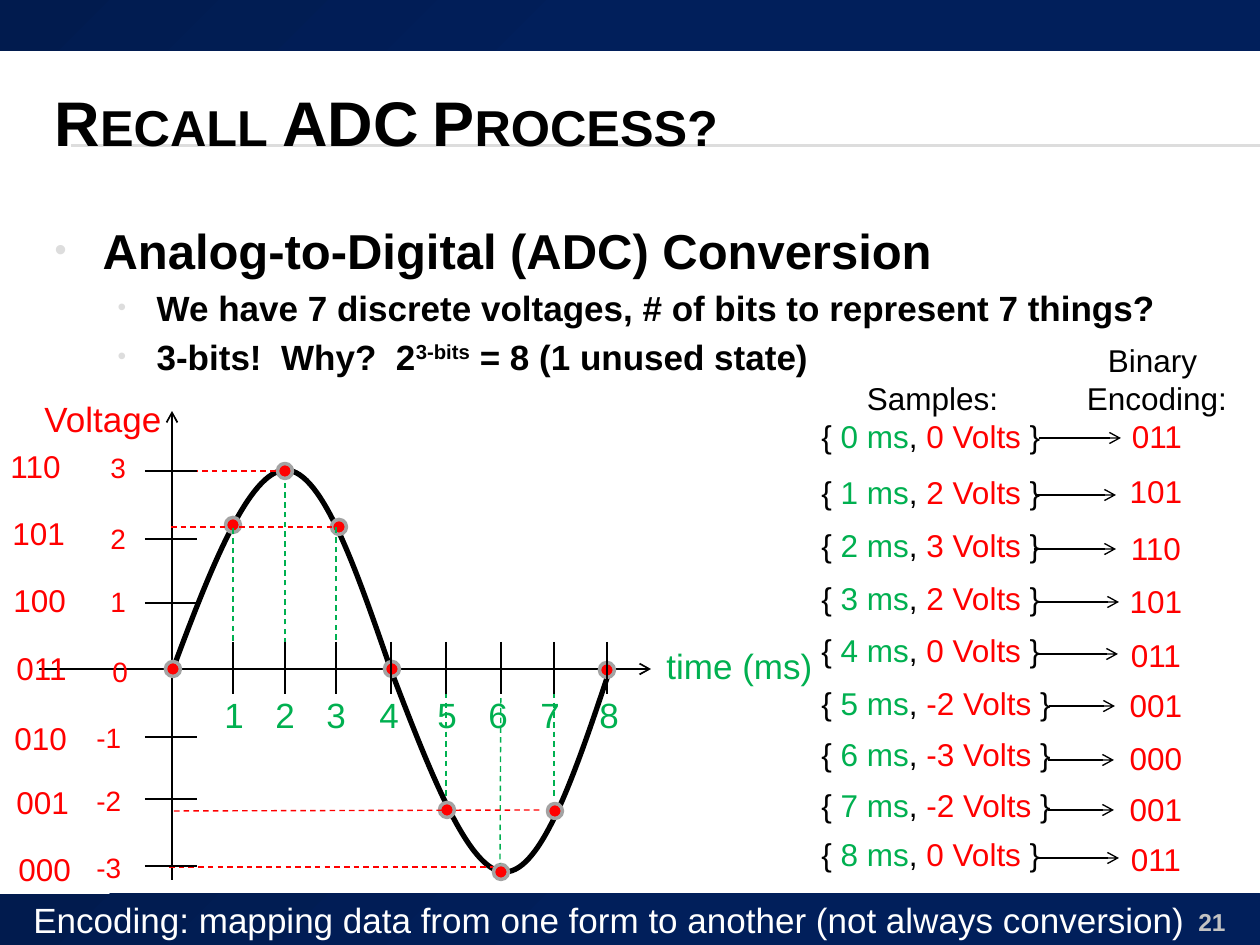
from lxml.etree import SubElement
from pptx import Presentation
from pptx.dml.color import RGBColor
from pptx.enum.dml import MSO_LINE
from pptx.enum.shapes import MSO_CONNECTOR, MSO_SHAPE
from pptx.enum.text import MSO_ANCHOR, MSO_AUTO_SIZE, PP_ALIGN
from pptx.oxml.ns import qn
from pptx.util import Pt

PX = 914400 / 126
FONT = "Arial"
BLACK, RED, GREEN, WHITE = "000000", "FF0000", "00B050", "FFFFFF"
PALE, RING, NAVY = "DDDDDD", "A3A3A3", ("011B4E", "011F5B")
VOLTAGES = [0, 2, 3, 2, 0, -2, -3, -2, 0]
DOTS = [(173, 669), (233, 525), (285, 471), (339, 527), (392, 669),
        (447, 810), (501, 872), (555, 811), (607, 670)]
TIME_TICKS = [(233, 212), (285, 263), (336, 314), (391, 367),
              (446, 425), (501, 476), (554, 528), (607, 587)]
LEVELS = [(3, 471, 444, 98, 441, -2), (2, 539, 515, 98, 508, 0),
          (1, 603, 578, 98, 575, 1), (0, None, 648, 100, 643, 4),
          (-1, 737, 714, 84, 713, 2), (-2, 799, 777, 84, 777, 4),
          (-3, 866, 844, 84, 844, 6)]
GUIDES = [(233, 670, 233, 525, GREEN), (171, 527, 336, 527, RED),
          (285, 673, 285, 479, GREEN), (173, 471, 284, 471, RED),
          (336, 669, 336, 525, GREEN), (446, 654, 446, 799, GREEN),
          (501, 669, 500, 864, GREEN), (554, 654, 554, 799, GREEN),
          (169, 867, 493, 867, RED), (174, 811, 542, 810, RED)]
SAMPLE_ROWS = [(373, 335, 438, 1039, 1121), (467, 466, 495, 1035, 1116),
               (520, 523, 549, 1034, 1116), (573, 576, 602, 1037, 1119),
               (625, 630, 654, 1036, 1118), (678, 680, 706, 1049, 1115),
               (729, 733, 760, 1048, 1114), (780, 784, 810, 1048, 1114),
               (829, 834, 858, 1037, 1119)]
WAVE = [
    [(173, 669), (210, 570), (249, 470), (286, 470), (323, 471), (357, 572), (392, 673)],
    [(392, 673), (430, 772), (469, 873), (505, 872), (542, 872), (576, 771), (610, 669)],
]


def px(*lengths):
    """Turn pixel lengths into EMU."""
    return [round(length * PX) for length in lengths]


def color(value):
    """Turn a hex string into a colour."""
    return RGBColor.from_string(value)


def binary_code(voltage):
    """Give the three-bit code of a voltage level."""
    return format(voltage + 3, "03b")


def add_run(paragraph, text, size=18, fill=BLACK, bold=False, **attributes):
    """Add a formatted run; extra keywords become run attributes."""
    run = paragraph.add_run()
    run.text = text
    run.font.name, run.font.size, run.font.bold = FONT, Pt(size), bold
    run.font.color.rgb = color(fill)
    for name, value in attributes.items():
        run.font._element.set(name, value)


def add_text(slide, box, paragraphs, size=18, fill=BLACK, bold=False, align=None):
    """Add a text box; paragraphs is a string or (alignment, runs) pairs."""
    shape = slide.shapes.add_textbox(*px(*box))
    frame = shape.text_frame
    frame.word_wrap = False
    frame.auto_size = MSO_AUTO_SIZE.SHAPE_TO_FIT_TEXT
    if isinstance(paragraphs, str):
        paragraphs = [(align, [(paragraphs, fill)])]
    for index, (alignment, runs) in enumerate(paragraphs):
        paragraph = frame.add_paragraph() if index else frame.paragraphs[0]
        paragraph.alignment = alignment
        for text, run_fill in runs:
            add_run(paragraph, text, size, run_fill, bold)


def add_line(slide, ends, fill=BLACK, width=0.79, dashed=False, arrow=False):
    """Add a straight line, dashed or with an arrowhead at its end."""
    connector = slide.shapes.add_connector(MSO_CONNECTOR.STRAIGHT, *px(*ends))
    connector.line.color.rgb = color(fill)
    connector.line.width = Pt(width)
    if dashed:
        connector.line.dash_style = MSO_LINE.DASH
    if arrow:
        SubElement(connector.line._get_or_add_ln(), qn("a:tailEnd"), type="arrow")
    SubElement(connector._element.spPr, qn("a:effectLst"))


def add_bar(slide, top):
    """Add a full-width navy gradient bar."""
    bar = slide.shapes.add_shape(MSO_SHAPE.RECTANGLE, *px(0, top, 1260, 51))
    bar.shadow.inherit = False
    bar.line.fill.background()
    bar.fill.gradient()
    bar.fill.gradient_angle = 315
    for stop, value, position in zip(bar.fill.gradient_stops, NAVY, (0, 0.5)):
        stop.color.rgb = color(value)
        stop.position = position


def add_dot(slide, center_x, center_y):
    """Add a ringed sample dot."""
    dot = slide.shapes.add_shape(MSO_SHAPE.OVAL, *px(center_x - 7.5, center_y - 7.5, 15, 15))
    dot.shadow.inherit = False
    dot.fill.solid()
    dot.fill.fore_color.rgb = color(RED)
    dot.line.color.rgb = color(RING)
    dot.line.width = Pt(2)


def add_curve(slide, points):
    """Add an open curve of cubic segments: a start, then three points each."""
    builder = slide.shapes.build_freeform(*points[0], scale=PX)
    builder.add_line_segments(points[1:], close=False)
    curve = builder.convert_to_shape()
    curve.shadow.inherit = False
    curve.fill.background()
    curve.line.color.rgb = color(BLACK)
    curve.line.width = Pt(3)
    outline = next(curve._element.iter(qn("a:path")))
    segments = outline.findall(qn("a:lnTo"))
    for start in range(0, len(segments), 3):
        cubic = SubElement(outline, qn("a:cubicBezTo"))
        for segment in segments[start:start + 3]:
            cubic.append(segment[0])
            outline.remove(segment)


def add_bullet(frame, index, level, margin, hang, runs, size):
    """Add one bold bulleted paragraph to the body."""
    paragraph = frame.add_paragraph() if index else frame.paragraphs[0]
    paragraph.level = level
    properties = paragraph._p.get_or_add_pPr()
    properties.set("marL", str(px(margin)[0]))
    properties.set("indent", str(px(-hang)[0]))
    SubElement(SubElement(properties, qn("a:buClr")), qn("a:srgbClr"), val=PALE)
    SubElement(properties, qn("a:buSzPct"), val="70000")
    SubElement(properties, qn("a:buFont"), typeface=FONT)
    SubElement(properties, qn("a:buChar"), char="•")
    for text, attributes in runs:
        add_run(paragraph, text, size, bold=True, **attributes)


def place(slide, shape, box, anchor):
    """Move a placeholder to its box and bring it forward."""
    shape.left, shape.top, shape.width, shape.height = px(*box)
    shape.text_frame.auto_size = MSO_AUTO_SIZE.NONE
    shape.text_frame.vertical_anchor = anchor
    slide.shapes._spTree.append(shape._element)


def add_heading(slide):
    """Fill the title and the bulleted body."""
    title, body = slide.shapes.title, slide.placeholders[1]
    place(slide, title, (42, 63, 1197, 116), MSO_ANCHOR.MIDDLE)
    paragraph = title.text_frame.paragraphs[0]
    paragraph.alignment = PP_ALIGN.LEFT
    add_run(paragraph, "Recall ADC Process?", 36, bold=True, cap="small")
    place(slide, body, (42, 214, 1290, 668), MSO_ANCHOR.TOP)
    frame = body.text_frame
    add_bullet(frame, 0, 0, 48, 48, [("Analog-to-Digital (ADC) Conversion", {})], 28)
    question = "We have 7 discrete voltages, # of bits to represent 7 things?"
    answer = [("3-bits!  Why?  2", {}), ("3-bits", {"baseline": "30000"}),
              (" = 8 (1 unused state)", {})]
    for index, runs in enumerate([[(question, {})], answer], 1):
        add_bullet(frame, index, 1, 102, 39, runs, 20)


def add_graph(slide):
    """Draw the sampled wave with its axes, ticks and guides."""
    add_line(slide, (39, 669, 651, 669), width=1, arrow=True)
    add_line(slide, (172, 880, 172, 411), width=1, arrow=True)
    add_text(slide, (654, 638, 173, 55), "time (ms)", 20, GREEN)
    add_text(slide, (32, 391, 144, 55), "Voltage", 20, RED)
    for points in WAVE:
        add_curve(slide, points)
    for center in DOTS:
        add_dot(slide, *center)
    for *ends, fill in GUIDES:
        add_line(slide, ends, fill, dashed=True)
    for number, (x, left) in enumerate(TIME_TICKS, 1):
        add_line(slide, (x, 642, x, 694))
        add_text(slide, (left, 687, 45, 55), str(number), 20, GREEN)
    for voltage, y, top, left, code_top, code_left in LEVELS:
        if y:
            add_line(slide, (145, y, 197, y))
        add_text(slide, (left, top, 50 if voltage < 0 else 42, 47), str(voltage), 16, RED)
        add_text(slide, (code_left, code_top, 78, 50), binary_code(voltage), 18, RED)


def add_samples(slide):
    """List each sample with an arrow to its binary code."""
    for time, (voltage, row) in enumerate(zip(VOLTAGES, SAMPLE_ROWS)):
        top, code_top, arrow_y, start, end = row
        sample = [(None, [("{ ", BLACK), (f"{time} ms", GREEN), (", ", BLACK),
                          (f"{voltage} Volts", RED), (" }", BLACK)])]
        code = [(PP_ALIGN.CENTER, [(binary_code(voltage), RED)])]
        code_left, code_width = 1117, 78
        if time == 0:
            sample.insert(0, (PP_ALIGN.CENTER, [("Samples:", BLACK)]))
            code = [(PP_ALIGN.CENTER, [(word, BLACK)]) for word in ("Binary ", "Encoding:")] + code
            code_left, code_width = 1074, 166
        add_text(slide, (809, top, 257 if voltage < 0 else 247, 50 * len(sample)), sample)
        add_text(slide, (code_left, code_top, code_width, 50), code)
        add_line(slide, (start, arrow_y, end, arrow_y), arrow=True)


def main():
    """Build the slide and save it."""
    presentation = Presentation()
    presentation.slide_width, presentation.slide_height = px(1260, 945)
    slide = presentation.slides.add_slide(presentation.slide_layouts[1])
    for y in (145, 146):
        add_line(slide, (71, y, 1260, y), PALE, 0.75)
    for top in (0, 894):
        add_bar(slide, top)
    add_heading(slide)
    add_graph(slide)
    add_samples(slide)
    add_text(slide, (1134, 901, 104, 34), "21", 14, "C3C3C3", True, PP_ALIGN.RIGHT)
    add_text(slide, (21, 892, 1184, 55),
             "Encoding: mapping data from one form to another (not always conversion)", 20, WHITE)
    presentation.save("out.pptx")


if __name__ == "__main__":
    main()
